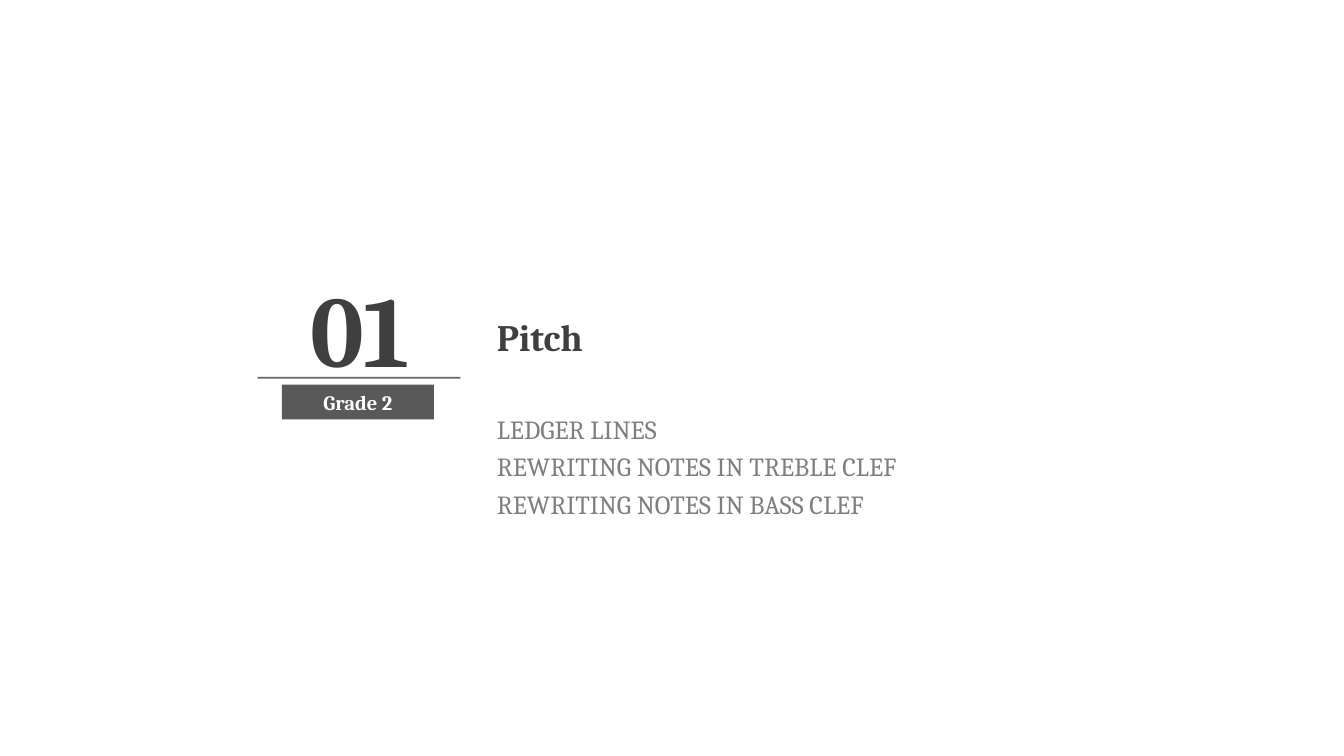
from lxml import etree
from pptx import Presentation
from pptx.dml.color import RGBColor
from pptx.enum.shapes import MSO_CONNECTOR, MSO_SHAPE
from pptx.enum.text import MSO_ANCHOR, PP_ALIGN
from pptx.oxml.ns import qn
from pptx.util import Cm, Pt

STRAIGHT = MSO_CONNECTOR.STRAIGHT
RECTANGLE = MSO_SHAPE.RECTANGLE
TOP, MIDDLE = MSO_ANCHOR.TOP, MSO_ANCHOR.MIDDLE
LEFT, CENTER = PP_ALIGN.LEFT, PP_ALIGN.CENTER

DARK = RGBColor(0x3F, 0x3F, 0x3F)
BADGE = RGBColor(0x59, 0x59, 0x59)
GREY = RGBColor(0x7F, 0x7F, 0x7F)
WHITE = RGBColor(0xFF, 0xFF, 0xFF)
FONT = "Cambria"


def write(holder, lines, size, color, bold=True, align=LEFT, anchor=TOP, spacing=None):
    frame = holder.text_frame
    frame.word_wrap = True
    frame.vertical_anchor = anchor
    frame.margin_left = frame.margin_right = Cm(0.19)
    frame.margin_top = frame.margin_bottom = Cm(0.1)
    frame.text = "\n".join(lines)
    for paragraph in frame.paragraphs:
        paragraph.alignment = align
        paragraph.line_spacing = spacing
        paragraph.font.name = FONT
        paragraph.font.size = Pt(size)
        paragraph.font.bold = bold
        paragraph.font.color.rgb = color


prs = Presentation()
prs.slide_width, prs.slide_height = Cm(25.4), Cm(14.29)
slide = prs.slides.add_slide(prs.slide_layouts[6])
shapes = slide.shapes

# Section number
number = shapes.add_textbox(Cm(5.33), Cm(4.94), Cm(2.95), Cm(2.49))
write(number, ["01"], 54, DARK, align=CENTER)

# Rule under the number, slightly transparent
rule = shapes.add_connector(STRAIGHT, Cm(4.87), Cm(7.14), Cm(8.7), Cm(7.14))
rule.line.color.rgb = DARK
rule.line.width = Pt(1)
rule_color = rule.line._ln.find(".//" + qn("a:srgbClr"))
etree.SubElement(rule_color, qn("a:alpha")).set("val", "78000")
etree.SubElement(rule._element.spPr, qn("a:effectLst"))

# Grade badge
grade = shapes.add_shape(RECTANGLE, Cm(5.33), Cm(7.27), Cm(2.87), Cm(0.66))
grade.shadow.inherit = False
grade.fill.solid()
grade.fill.fore_color.rgb = BADGE
grade.line.fill.background()
write(grade, ["Grade 2"], 11, WHITE, align=CENTER, anchor=MIDDLE)

# Section title
title = shapes.add_textbox(Cm(9.2), Cm(5.84), Cm(5.79), Cm(1.04))
write(title, ["Pitch"], 20, DARK)

# Topics
topics = shapes.add_textbox(Cm(9.2), Cm(7.59), Cm(12.85), Cm(4.45))
write(
    topics,
    ["LEDGER LINES", "REWRITING NOTES IN TREBLE CLEF", "REWRITING NOTES IN BASS CLEF"],
    14, GREY, bold=False, spacing=1.2,
)

prs.save("out.pptx")
